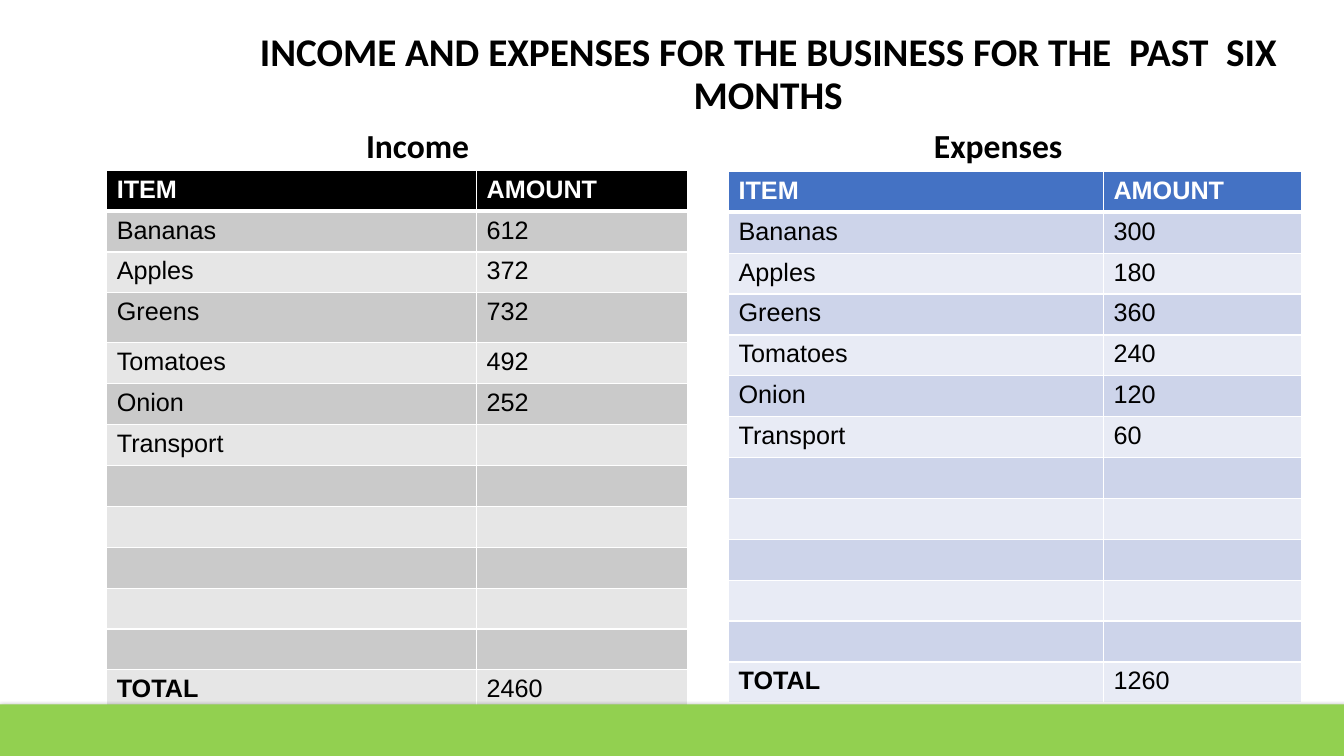
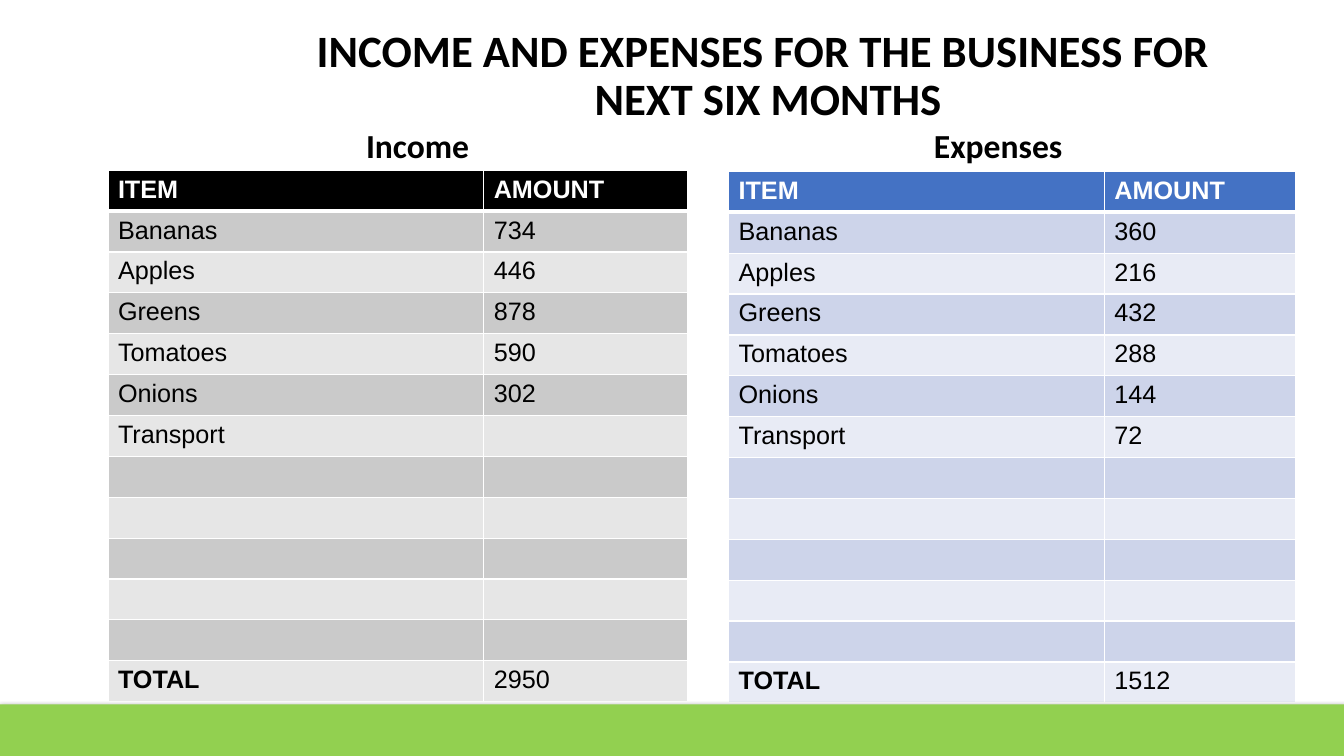
from dataclasses import dataclass

import lxml.etree
import pptx
import pptx.dml.color
import pptx.enum.shapes
import pptx.enum.text
import pptx.oxml
import pptx.oxml.ns
import pptx.util

Cm = pptx.util.Cm
Pt = pptx.util.Pt
Anchor = pptx.enum.text.MSO_ANCHOR

BLACK, WHITE, GREEN = "000000", "FFFFFF", "92D050"
TITLE_FONT, TABLE_FONT = "Calibri", "Arial"
SLIDE_W, SLIDE_H = 33.87, 19.05
BAND_TOP = 17.75
TITLE_LEFT, TITLE_W = 5.44, 27.84
HEADING_TOP, HEADING_W, HEADING_H = 2.69, 13.59, 1.6
ROW_H, TALL_ROW_H = 1.03, 1.26
EMPTY_ROWS = 5


@dataclass(frozen=True)
class Side:
    """Place and colours of one half of the slide."""
    heading: str
    heading_left: float
    table_top: float
    header: str
    odd_row: str
    even_row: str


@dataclass(frozen=True)
class Ledger:
    side: Side
    left: float
    widths: tuple[float, float]
    amounts: tuple[str, ...]
    total: str
    tall_row: int | None = None


@dataclass(frozen=True)
class Page:
    title: str
    title_size: int
    title_top: float
    title_h: float
    items: tuple[str, ...]
    ledgers: tuple[Ledger, Ledger]


INCOME = Side("Income", 3.73, 4.29, BLACK, "CACACA", "E6E6E6")
EXPENSES = Side("Expenses", 18.36, 4.32, "4472C4", "CDD4EA", "E8EBF5")

PAGES = (
    Page(
        "INCOME AND EXPENSES FOR THE BUSINESS FOR THE  PAST  SIX MONTHS",
        28, 0.89, 2.01,
        ("Bananas", "Apples", "Greens", "Tomatoes", "Onion", "Transport"),
        (
            Ledger(INCOME, 2.69, (9.32, 5.31),
                   ("612", "372", "732", "492", "252", ""), "2460", tall_row=3),
            Ledger(EXPENSES, 18.36, (9.45, 4.98),
                   ("300", "180", "360", "240", "120", "60"), "1260"),
        ),
    ),
    Page(
        "INCOME AND EXPENSES FOR THE BUSINESS FOR \nNEXT SIX MONTHS",
        32, 1.17, 1.55,
        ("Bananas", "Apples", "Greens", "Tomatoes", "Onions", "Transport"),
        (
            Ledger(INCOME, 2.72, (9.47, 5.13),
                   ("734", "446", "878", "590", "302", ""), "2950"),
            Ledger(EXPENSES, 18.36, (9.47, 4.83),
                   ("360", "216", "432", "288", "144", "72"), "1512"),
        ),
    ),
)


def rgb(color: str) -> pptx.dml.color.RGBColor:
    return pptx.dml.color.RGBColor.from_string(color)


def format_runs(p, font: str, size: int, color: str, bold: bool) -> None:
    for r in p.runs:
        r.font.name = font
        r.font.size = Pt(size)
        r.font.bold = bold
        r.font.color.rgb = rgb(color)


def add_caption(s, text: str, size: int, left: float, top: float,
                width: float, height: float, anchor) -> None:
    """Centred bold text, used for titles and table headings."""
    tf = s.shapes.add_textbox(Cm(left), Cm(top), Cm(width), Cm(height)).text_frame
    tf.word_wrap = True
    tf.vertical_anchor = anchor
    p = tf.paragraphs[0]
    p.text = text
    p.alignment = pptx.enum.text.PP_ALIGN.CENTER
    p.line_spacing = 0.9
    format_runs(p, TITLE_FONT, size, BLACK, True)


def set_borders(cell, top: float, bottom: float) -> None:
    """White cell borders; must run before the cell gets its fill."""
    tc_pr = cell._tc.get_or_add_tcPr()
    for tag, width in (("lnL", 1), ("lnR", 1), ("lnT", top), ("lnB", bottom)):
        ln = lxml.etree.SubElement(tc_pr, pptx.oxml.ns.qn(f"a:{tag}"), w=str(Pt(width)))
        fill = lxml.etree.SubElement(ln, pptx.oxml.ns.qn("a:solidFill"))
        lxml.etree.SubElement(fill, pptx.oxml.ns.qn("a:srgbClr"), val=WHITE)


def add_ledger(s, items: tuple[str, ...], ledger: Ledger) -> None:
    side = ledger.side
    add_caption(s, side.heading, 24, side.heading_left, HEADING_TOP,
                HEADING_W, HEADING_H, Anchor.BOTTOM)

    rows = [("ITEM", "AMOUNT"), *zip(items, ledger.amounts),
            *[("", "")] * EMPTY_ROWS, ("TOTAL", ledger.total)]
    table = s.shapes.add_table(
        len(rows), 2, Cm(ledger.left), Cm(side.table_top),
        Cm(sum(ledger.widths)), Cm(ROW_H * len(rows))).table
    for column, width in zip(table.columns, ledger.widths):
        column.width = Cm(width)

    for i, values in enumerate(rows):
        table.rows[i].height = Cm(TALL_ROW_H if i == ledger.tall_row else ROW_H)
        is_header = i == 0
        color = side.header if is_header else (side.even_row, side.odd_row)[i % 2]
        for j, value in enumerate(values):
            cell = table.cell(i, j)
            set_borders(cell, 3 if i == 1 else 1, 3 if is_header else 1)
            cell.fill.solid()
            cell.fill.fore_color.rgb = rgb(color)
            p = cell.text_frame.paragraphs[0]
            if value:
                p.text = value
            format_runs(p, TABLE_FONT, 18, WHITE if is_header else BLACK,
                        is_header or value == "TOTAL")


def add_band(s) -> None:
    """Green footer band with a soft shadow."""
    sp = s.shapes.add_shape(
        pptx.enum.shapes.MSO_SHAPE.RECTANGLE, 0, Cm(BAND_TOP),
        Cm(SLIDE_W), Cm(SLIDE_H - BAND_TOP))
    sp.fill.solid()
    sp.fill.fore_color.rgb = rgb(GREEN)
    sp.line.fill.background()
    sp.shadow.inherit = False
    effects = sp._element.spPr.find(pptx.oxml.ns.qn("a:effectLst"))
    effects.append(pptx.oxml.parse_xml(
        f'<a:outerShdw {pptx.oxml.ns.nsdecls("a")} blurRad="{Pt(4.5)}" '
        f'dist="{Pt(1.5)}" dir="5400000" algn="ctr" rotWithShape="0">'
        f'<a:srgbClr val="{BLACK}"><a:alpha val="63000"/></a:srgbClr></a:outerShdw>'))


def main() -> None:
    prs = pptx.Presentation()
    prs.slide_width, prs.slide_height = Cm(SLIDE_W), Cm(SLIDE_H)
    for page in PAGES:
        s = prs.slides.add_slide(prs.slide_layouts[6])
        add_caption(s, page.title, page.title_size, TITLE_LEFT, page.title_top,
                    TITLE_W, page.title_h, Anchor.MIDDLE)
        for ledger in page.ledgers:
            add_ledger(s, page.items, ledger)
        add_band(s)
    prs.save("out.pptx")


if __name__ == "__main__":
    main()
